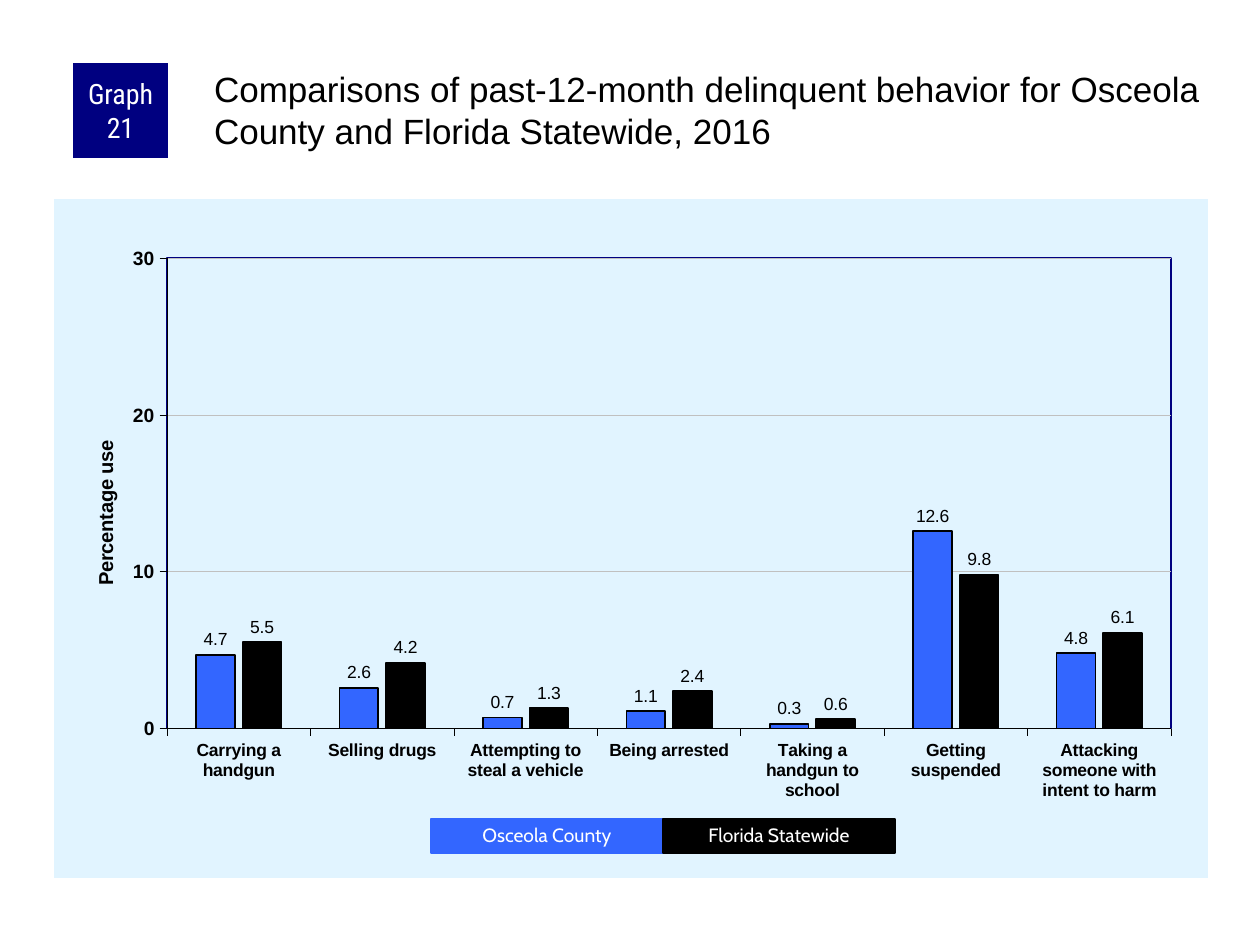
from dataclasses import dataclass

from lxml import etree
from pptx import Presentation
from pptx.chart.data import CategoryChartData
from pptx.dml.color import RGBColor
from pptx.enum.chart import XL_CHART_TYPE, XL_LABEL_POSITION, XL_TICK_MARK
from pptx.enum.shapes import MSO_SHAPE
from pptx.enum.text import MSO_ANCHOR, MSO_AUTO_SIZE, PP_ALIGN
from pptx.oxml import parse_xml
from pptx.oxml.ns import nsdecls, qn
from pptx.util import Pt

PX = 914400 / 126
NAVY, BLUE, BLACK, WHITE = "000080", "3366FF", "000000", "FFFFFF"
PANEL, GRID = "E1F4FF", "C0C0C0"


@dataclass(frozen=True)
class Box:
    left: int
    top: int
    width: int
    height: int


@dataclass(frozen=True)
class Region:
    name: str
    color: str
    values: tuple[float, ...]


BEHAVIORS = (
    "Carrying a handgun", "Selling drugs", "Attempting to steal a vehicle",
    "Being arrested", "Taking a handgun to school", "Getting suspended",
    "Attacking someone with intent to harm",
)
REGIONS = (
    Region("Osceola County", BLUE, (4.7, 2.6, 0.7, 1.1, 0.3, 12.6, 4.8)),
    Region("Florida Statewide", BLACK, (5.5, 4.2, 1.3, 2.4, 0.6, 9.8, 6.1)),
)


def emu(px: int) -> int:
    return round(px * PX)


def place(box: Box) -> tuple[int, int, int, int]:
    return emu(box.left), emu(box.top), emu(box.width), emu(box.height)


def rgb(color: str) -> RGBColor:
    return RGBColor.from_string(color)


def apply(target, formats: dict) -> None:
    for name, value in formats.items():
        setattr(target, name, value)


def set_font(font, name: str, size: float, color: str, bold: bool = False) -> None:
    apply(font, {"name": name, "size": Pt(size), "bold": bold})
    font.color.rgb = rgb(color)


def set_line(line, color: str, width: float) -> None:
    line.color.rgb = rgb(color)
    line.width = Pt(width)


def set_layout(parent, index: int, target: str = "", **parts: float) -> None:
    """Place a chart part by fractions of the chart's width and height."""
    for old in parent.findall(qn("c:layout")):
        parent.remove(old)
    layout = parse_xml(f"<c:layout {nsdecls('c')}><c:manualLayout/></c:layout>")
    settings = {"layoutTarget": target} if target else {}
    settings |= {"xMode": "edge", "yMode": "edge"} | parts
    for tag, value in settings.items():
        etree.SubElement(layout[0], qn(f"c:{tag}")).set("val", str(value))
    parent.insert(index, layout)


def shape_properties(content: str):
    return parse_xml(f"<c:spPr {nsdecls('c', 'a')}>{content}</c:spPr>")


def solid(color: str) -> str:
    return f'<a:solidFill><a:srgbClr val="{color}"/></a:solidFill>'


def add_label_box(slide, box: Box, text: str, fill: str, font: str, size: float):
    label = slide.shapes.add_shape(MSO_SHAPE.RECTANGLE, *place(box))
    label.shadow.inherit = False
    label.fill.solid()
    label.fill.fore_color.rgb = rgb(fill)
    label.line.fill.background()
    label.text_frame.text = text
    apply(label.text_frame, {"word_wrap": True, "vertical_anchor": MSO_ANCHOR.MIDDLE})
    paragraph = label.text_frame.paragraphs[0]
    paragraph.alignment = PP_ALIGN.CENTER
    set_font(paragraph.runs[0].font, font, size, WHITE)
    return label


def add_heading(slide) -> None:
    heading = slide.shapes.title
    apply(heading, dict(zip(("left", "top", "width", "height"),
                            place(Box(210, 63, 998, 105)))))
    frame = heading.text_frame
    frame.text = ("Comparisons of past-12-month delinquent behavior for Osceola "
                  "County and Florida Statewide, 2016")
    apply(frame, {
        "margin_left": emu(4), "margin_top": emu(4), "margin_right": 0,
        "margin_bottom": 0, "word_wrap": True, "vertical_anchor": MSO_ANCHOR.TOP,
        "auto_size": MSO_AUTO_SIZE.NONE,
    })
    frame.paragraphs[0].alignment = PP_ALIGN.LEFT
    set_font(frame.paragraphs[0].runs[0].font, "Arial", 20, BLACK)


def add_graph_number(slide) -> None:
    badge = add_label_box(slide, Box(73, 63, 95, 95), "Graph 21", NAVY,
                          "Roboto Condensed", 16)
    apply(badge.text_frame, {"margin_left": emu(6), "margin_right": emu(6),
                             "margin_top": 0, "margin_bottom": 0})


def add_behavior_chart(slide) -> None:
    data = CategoryChartData(number_format="0.0")
    data.categories = BEHAVIORS
    for region in REGIONS:
        data.add_series(region.name, region.values)
    chart = slide.shapes.add_chart(XL_CHART_TYPE.COLUMN_CLUSTERED,
                                   *place(Box(54, 199, 1154, 679)), data).chart
    apply(chart, {"has_legend": False, "has_title": False})
    set_font(chart.font, "Arial", 11.5, BLACK)
    apply(chart.plots[0], {"gap_width": 150, "overlap": -20,
                           "vary_by_categories": False})

    for series, region in zip(chart.plots[0].series, REGIONS):
        series.invert_if_negative = False
        series.format.fill.solid()
        series.format.fill.fore_color.rgb = rgb(region.color)
        set_line(series.format.line, BLACK, 1)
        labels = series.data_labels
        apply(labels, {"show_value": True, "number_format": "0.0",
                       "number_format_is_linked": False,
                       "position": XL_LABEL_POSITION.OUTSIDE_END})
        set_font(labels.font, "Arial", 10, BLACK)

    percent = chart.value_axis
    for axis, size in ((chart.category_axis, 10), (percent, 11)):
        apply(axis, {"major_tick_mark": XL_TICK_MARK.OUTSIDE,
                     "minor_tick_mark": XL_TICK_MARK.NONE})
        set_font(axis.tick_labels.font, "Arial", size, BLACK, bold=True)
        set_line(axis.format.line, BLACK, 0.25)
    apply(percent, {"minimum_scale": 0, "maximum_scale": 30, "major_unit": 10,
                    "has_major_gridlines": True})
    apply(percent.tick_labels, {"number_format": "0", "number_format_is_linked": False})
    set_line(percent.major_gridlines.format.line, GRID, 0.25)

    caption = percent.axis_title.text_frame
    caption.text = "Percentage use"
    set_font(caption.paragraphs[0].runs[0].font, "Arial", 11.5, BLACK, bold=True)
    set_layout(percent.axis_title._element, 1, x=0.03, y=0.35)

    space = chart._chartSpace
    plot_area = space.chart.plotArea
    set_layout(plot_area, 0, "inner", x=0.098, y=0.087, w=0.87, h=0.693)
    plot_area.append(shape_properties(
        f'<a:noFill/><a:ln w="{Pt(1)}">{solid(NAVY)}</a:ln>'))
    space.chart.addnext(shape_properties(solid(PANEL) + "<a:ln><a:noFill/></a:ln>"))


def add_legend(slide) -> None:
    left, width = 431, 232
    for index, region in enumerate(REGIONS):
        key = add_label_box(slide, Box(left + index * width, 819, width, 34),
                            region.name, region.color, "Cabin", 11)
        set_line(key.line, region.color, 0.75)
        key.text_frame.auto_size = MSO_AUTO_SIZE.SHAPE_TO_FIT_TEXT
        key.text_frame.paragraphs[0].line_spacing = 0.9


def main() -> None:
    deck = Presentation()
    apply(deck, {"slide_width": emu(1260), "slide_height": emu(945)})
    slide = deck.slides.add_slide(deck.slide_layouts[5])
    add_heading(slide)
    add_behavior_chart(slide)
    add_graph_number(slide)
    add_legend(slide)
    deck.save("out.pptx")


if __name__ == "__main__":
    main()
